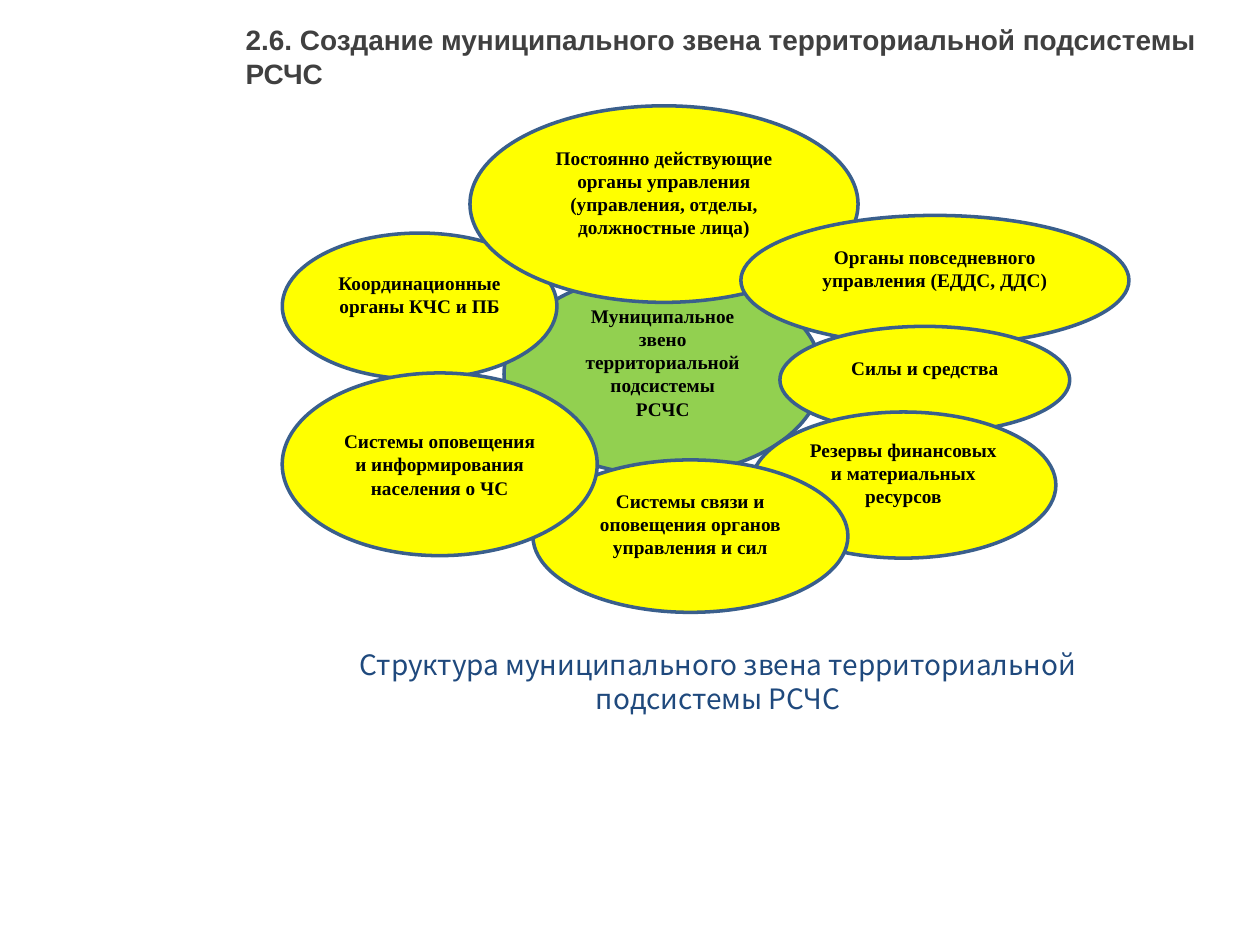
from dataclasses import dataclass

from pptx import Presentation
from pptx.dml.color import RGBColor
from pptx.enum.shapes import MSO_SHAPE
from pptx.enum.text import MSO_ANCHOR, PP_ALIGN
from pptx.util import Inches, Pt


@dataclass(frozen=True)
class Theme:
    title: str = "404040"
    caption: str = "1F497D"
    label: str = "000000"
    centre: str = "92D050"
    member: str = "FFFF00"
    outline: str = "3A5F8C"
    heading_size: float = 16
    label_size: float = 11
    title_font: str = "Arial"
    caption_font: str = "Noto Sans CJK KR"
    label_font: str = "Times New Roman"


THEME = Theme()
INSET = 0.05
RAISED = 0.24  # bottom inset that lifts a label above the middle

CENTRE = ((4, 2.17, 2.52, 1.6),
          ["Муниципальное", "звено", "территориальной подсистемы", "РСЧС"])

# Back to front: box, label lines, bottom inset
MEMBERS = [
    ((2.24, 1.85, 2.18, 1.16), ["Координационные органы КЧС и ПБ"], RAISED),
    ((3.73, 0.84, 3.08, 1.56),
     ["Постоянно действующие органы управления (управления, отделы, должностные лица)"], RAISED),
    ((5.88, 1.71, 3.08, 1.03), ["Органы повседневного управления (ЕДДС, ДДС)"], RAISED),
    ((6.19, 2.59, 2.3, 0.85), ["Силы и средства"], RAISED),
    ((5.96, 3.27, 2.42, 1.16), ["Резервы финансовых и материальных ресурсов"], RAISED),
    ((4.23, 3.65, 2.5, 1.21),
     ["Системы связи и", "оповещения органов", "управления и сил"], RAISED),
    ((2.24, 2.96, 2.5, 1.45), ["Системы оповещения и информирования населения о ЧС"], INSET),
]


def write(tf, lines, font, size, color, bold=False, align=PP_ALIGN.CENTER):
    tf.word_wrap = True
    for i, line in enumerate(lines):
        p = tf.paragraphs[0] if i == 0 else tf.add_paragraph()
        p.alignment = align
        p.line_spacing = 1.0
        p.space_before = Pt(0)
        r = p.add_run()
        r.text = line
        r.font.name = font
        r.font.size = Pt(size)
        r.font.bold = bold
        r.font.color.rgb = RGBColor.from_string(color)


def add_title(s, text):
    sp = s.shapes.title
    sp.left, sp.top, sp.width, sp.height = map(Inches, (1.85, 0.13, 7.8, 0.64))
    sp.text_frame.vertical_anchor = MSO_ANCHOR.TOP
    write(sp.text_frame, [text], THEME.title_font, THEME.heading_size, THEME.title,
          bold=True, align=PP_ALIGN.LEFT)


def add_caption(s, text):
    sp = s.shapes.add_textbox(*map(Inches, (2.17, 5.09, 7.06, 0.64)))
    write(sp.text_frame, [text], THEME.caption_font, THEME.heading_size, THEME.caption)


def add_ellipse(s, box, lines, fill, bottom):
    sp = s.shapes.add_shape(MSO_SHAPE.OVAL, *map(Inches, box))
    sp.shadow.inherit = False
    sp.fill.solid()
    sp.fill.fore_color.rgb = RGBColor.from_string(fill)
    sp.line.color.rgb = RGBColor.from_string(THEME.outline)
    sp.line.width = Pt(2)
    tf = sp.text_frame
    tf.vertical_anchor = MSO_ANCHOR.MIDDLE
    tf.margin_bottom = Inches(bottom)
    write(tf, lines, THEME.label_font, THEME.label_size, THEME.label, bold=True)


def main():
    prs = Presentation()
    prs.slide_width, prs.slide_height = Inches(10), Inches(7.5)
    s = prs.slides.add_slide(prs.slide_layouts[5])
    add_title(s, "2.6. Создание муниципального звена территориальной подсистемы РСЧС")
    add_ellipse(s, *CENTRE, THEME.centre, RAISED)
    for box, lines, bottom in MEMBERS:
        add_ellipse(s, box, lines, THEME.member, bottom)
    add_caption(s, "Структура муниципального звена территориальной подсистемы РСЧС")
    prs.save("out.pptx")


if __name__ == "__main__":
    main()
